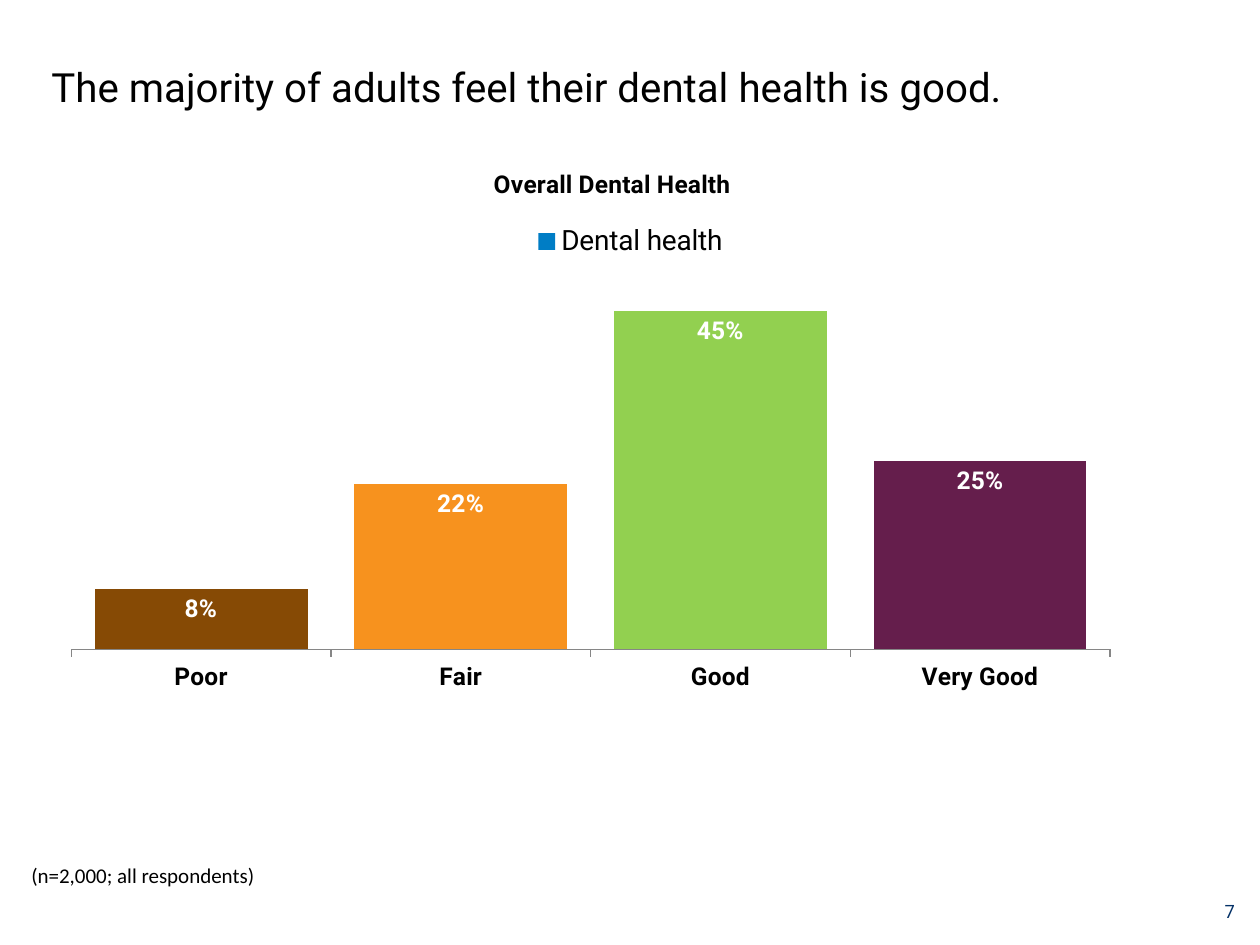
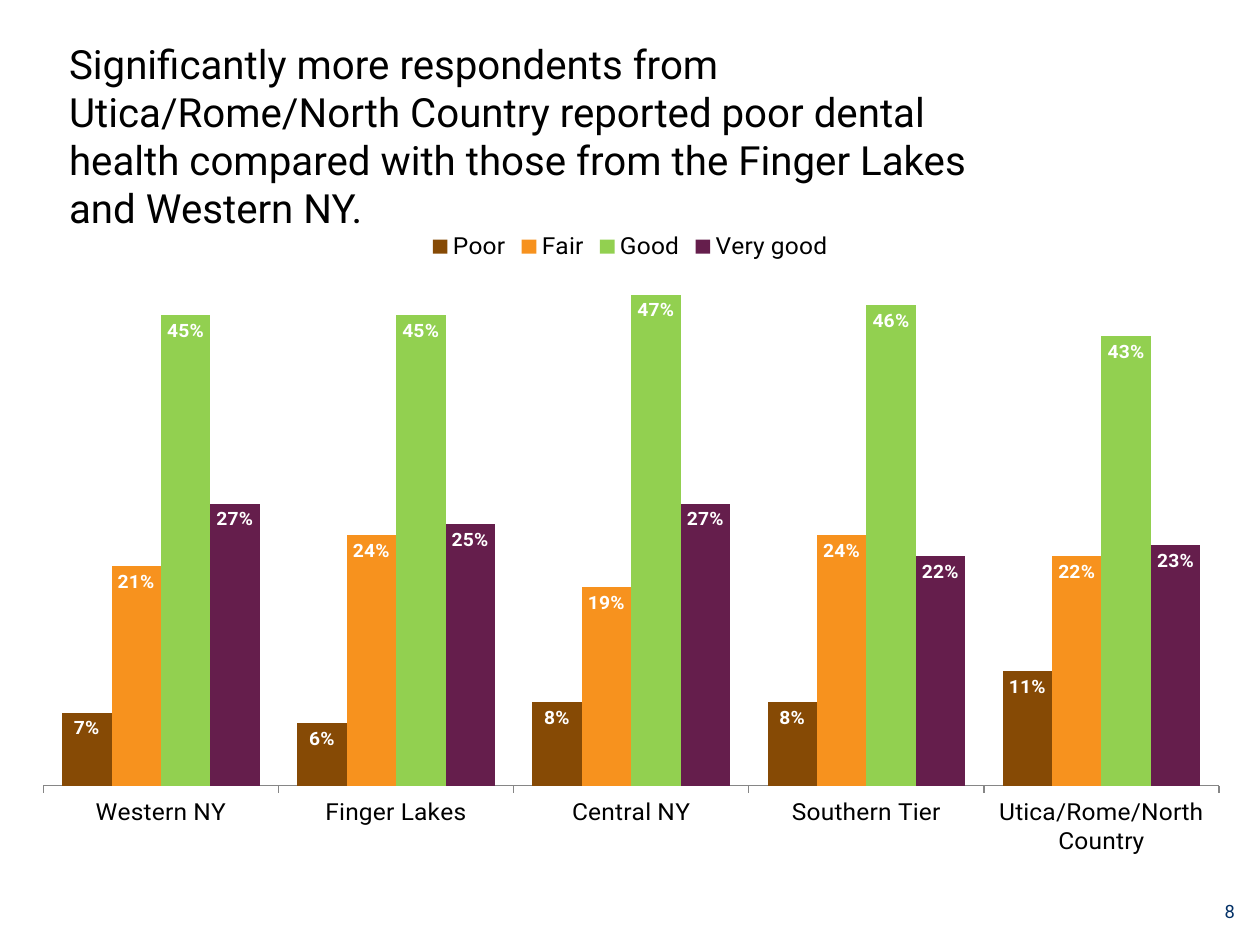
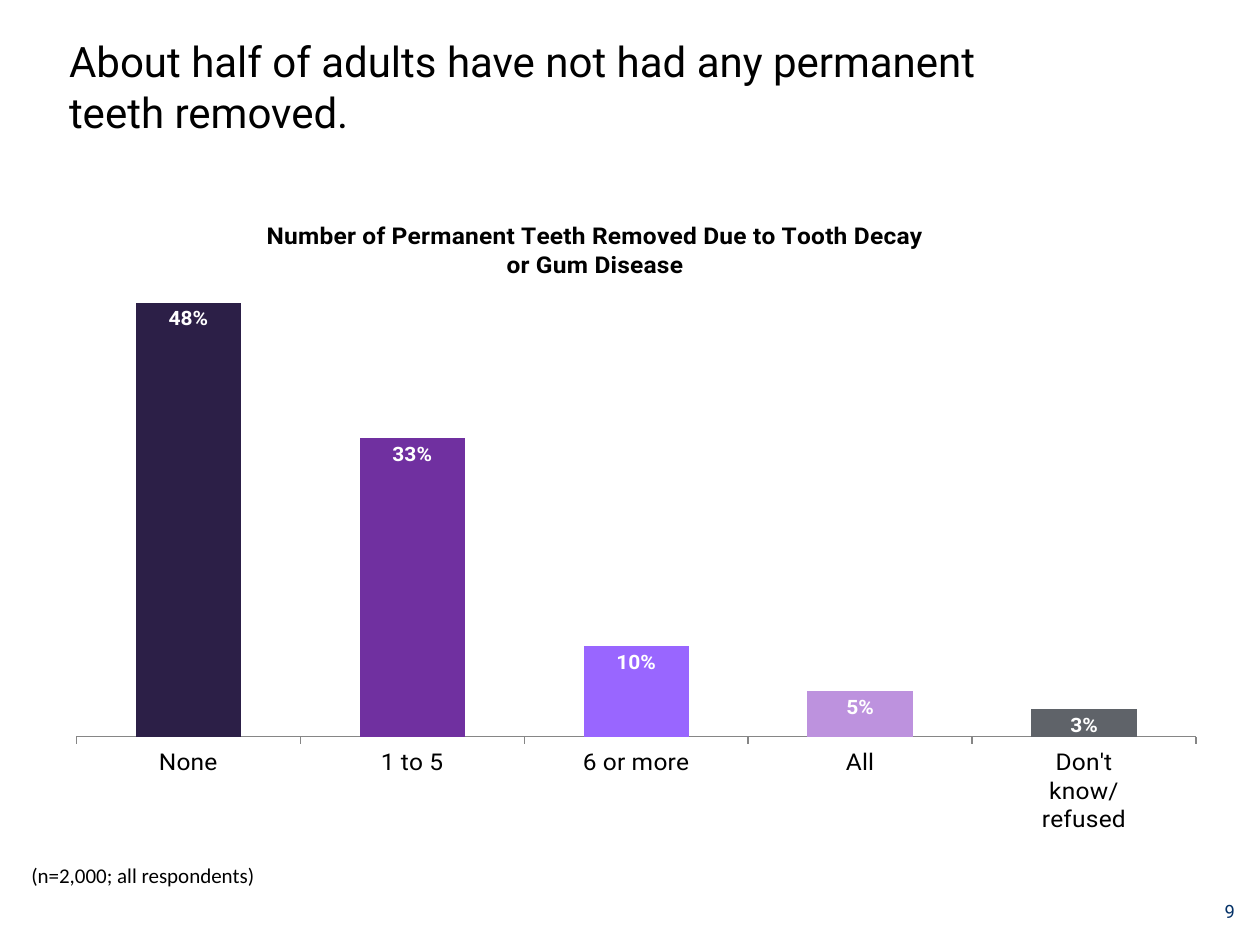
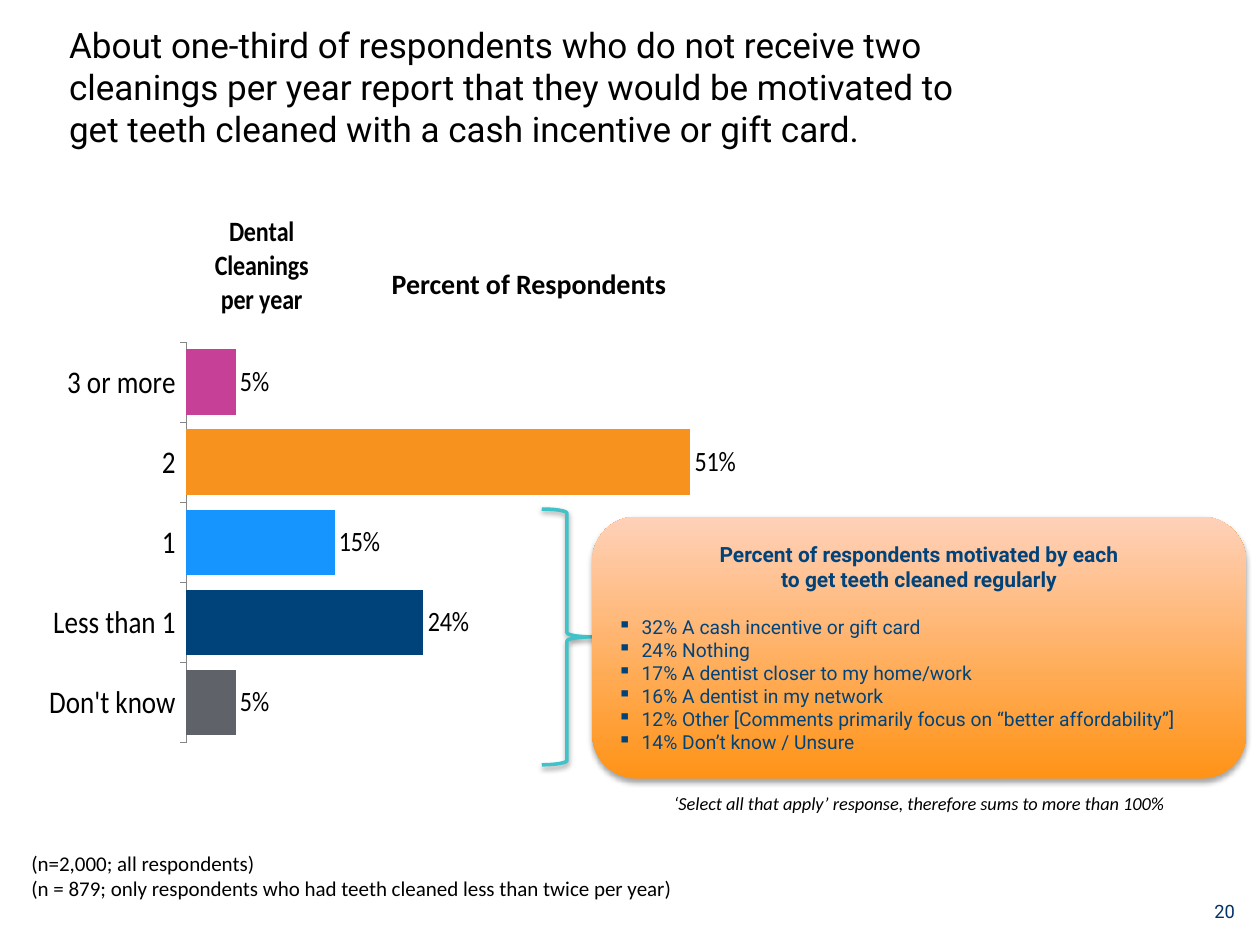
from dataclasses import dataclass

from pptx import Presentation
from pptx.chart.data import CategoryChartData
from pptx.dml.color import RGBColor
from pptx.enum.chart import XL_CHART_TYPE, XL_LABEL_POSITION, XL_LEGEND_POSITION, XL_TICK_MARK
from pptx.enum.shapes import MSO_SHAPE
from pptx.enum.text import MSO_ANCHOR, PP_ALIGN
from pptx.oxml import parse_xml
from pptx.oxml.ns import nsdecls, qn
from pptx.util import Inches, Pt

COLUMNS = XL_CHART_TYPE.COLUMN_CLUSTERED
BARS = XL_CHART_TYPE.BAR_CLUSTERED
INSIDE_END = XL_LABEL_POSITION.INSIDE_END
OUTSIDE_END = XL_LABEL_POSITION.OUTSIDE_END
LEGEND_TOP = XL_LEGEND_POSITION.TOP
TICK_OUTSIDE = XL_TICK_MARK.OUTSIDE
TICK_NONE = XL_TICK_MARK.NONE
BRACE = MSO_SHAPE.RIGHT_BRACE
CALLOUT = MSO_SHAPE.ROUNDED_RECTANGULAR_CALLOUT
TOP, MIDDLE = MSO_ANCHOR.TOP, MSO_ANCHOR.MIDDLE
LEFT, CENTER, RIGHT = PP_ALIGN.LEFT, PP_ALIGN.CENTER, PP_ALIGN.RIGHT


@dataclass(frozen=True)
class Theme:
    heading_font: str = "Roboto"
    body_font: str = "Calibri"
    black: str = "000000"
    white: str = "FFFFFF"
    axis: str = "868686"
    page_number: str = "043167"
    blue: str = "007DC5"
    navy: str = "00437B"
    teal: str = "3FC2C8"
    brown: str = "864A05"
    orange: str = "F7921E"
    green: str = "92D050"
    plum: str = "651E4C"
    gray: str = "5F6369"
    sky: str = "1795FF"
    pink: str = "C64097"
    dark_teal: str = "073F5E"
    teeth: tuple = ("2C1F47", "7030A0", "9966FF", "BD92DE", "5F6369")
    callout_bottom: str = "FF9316"
    callout_top: str = "FFD1B9"
    title_size: float = 23
    chart_title_size: float = 14
    subtitle_size: float = 16
    callout_size: float = 12
    bullet_size: float = 11
    note_size: float = 12
    small_size: float = 10.5

    @property
    def ratings(self):
        return self.brown, self.orange, self.green, self.plum


class Deck:
    def __init__(self, theme):
        self.theme = theme
        self.presentation = Presentation()
        self.presentation.slide_width = Inches(10)
        self.presentation.slide_height = Inches(7.5)
        self.slide = None

    def style(self, font, size, color, name, bold=False, italic=False):
        font.size, font.name = Pt(size), name
        font.bold, font.italic = bold, italic
        font.color.rgb = RGBColor.from_string(color)

    def text(self, box, content, size, color=None, name=None, anchor=TOP,
             align=LEFT, wrap=True, bold=False, italic=False):
        shape = self.slide.shapes.add_textbox(*map(Inches, box))
        frame = shape.text_frame
        frame.word_wrap, frame.vertical_anchor = wrap, anchor
        frame.text = content
        for paragraph in frame.paragraphs:
            paragraph.alignment = align
            for run in paragraph.runs:
                self.style(run.font, size, color or self.theme.black,
                           name or self.theme.body_font, bold, italic)

    def start_slide(self, number, title, left, width, top=0.3, size=None):
        theme = self.theme
        self.slide = self.presentation.slides.add_slide(self.presentation.slide_layouts[6])
        self.text((left, top, width, 0.77), title, size or theme.title_size,
                  name=theme.heading_font, anchor=MIDDLE)
        self.text((9.3, 7.11, 0.6, 0.24), str(number), theme.small_size,
                  theme.page_number, theme.heading_font, MIDDLE, RIGHT)

    def note(self, content, top=6.8, width=1.99, height=0.3):
        self.text((0.15, top, width, height), content, self.theme.note_size, wrap=False)

    def place(self, chart, part, index, percents):
        parent = chart.element.find(f'.//{qn(part)}')
        for layout in parent.findall(qn("c:layout")):
            parent.remove(layout)
        target = '<c:layoutTarget val="inner"/>' if len(percents) == 4 else ""
        lengths = "".join(f'<c:{name} val="{percent / 100:.4f}"/>'
                          for name, percent in zip("xywh", percents))
        parent.insert(index, parse_xml(
            f'<c:layout {nsdecls("c")}><c:manualLayout>{target}'
            f'<c:xMode val="edge"/><c:yMode val="edge"/>{lengths}'
            f'</c:manualLayout></c:layout>'))

    def chart(self, box, categories, series, colors, plot_percents, gap, maximum,
              label_size, axis_size, kind=COLUMNS, point_colors=(), font=None,
              axis_bold=False, label_color=None, label_bold=True,
              label_position=INSIDE_END, legend_size=None, legend_percents=None):
        theme = self.theme
        font = font or theme.heading_font
        data = CategoryChartData(number_format="0%")
        data.categories = categories
        for name, percents in series.items():
            data.add_series(name, [percent / 100 for percent in percents])
        chart = self.slide.shapes.add_chart(kind, *map(Inches, box), data).chart
        self.style(chart.font, axis_size, theme.black, theme.body_font)
        chart.element.find(qn("c:txPr")).addprevious(parse_xml(
            f'<c:spPr {nsdecls("c", "a")}><a:noFill/><a:ln><a:noFill/></a:ln></c:spPr>'))
        chart.has_title = False
        self.place(chart, "c:plotArea", 0, plot_percents)

        plot = chart.plots[0]
        plot.vary_by_categories, plot.gap_width, plot.overlap = False, gap, 0
        for bars, color in zip(plot.series, colors):
            bars.invert_if_negative = False
            for target, fill_color in [(bars, color)] + [
                    (bars.points[index], value) for index, value in enumerate(point_colors)]:
                target.format.fill.solid()
                target.format.fill.fore_color.rgb = RGBColor.from_string(fill_color)
            labels = bars.data_labels
            self.style(labels.font, label_size, label_color or theme.white, font, label_bold)
            labels.number_format, labels.number_format_is_linked = "0%", False
            labels.position, labels.show_value = label_position, True

        values = chart.value_axis
        values.visible = values.has_major_gridlines = False
        values.minimum_scale, values.maximum_scale = 0, maximum
        axis = chart.category_axis
        axis.major_tick_mark, axis.minor_tick_mark = TICK_OUTSIDE, TICK_NONE
        axis.format.line.color.rgb = RGBColor.from_string(theme.axis)
        self.style(axis.tick_labels.font, axis_size, theme.black, font, axis_bold)
        chart.has_legend = legend_size is not None
        if chart.has_legend:
            chart.legend.position, chart.legend.include_in_layout = LEGEND_TOP, False
            self.style(chart.legend.font, legend_size, theme.black, font)
        if legend_percents:
            self.place(chart, "c:legend", 1, legend_percents)
        return chart

    def chart_title(self, chart, content, percents, size=None, name=None):
        frame = chart.chart_title.text_frame
        frame.text = content
        for paragraph in frame.paragraphs:
            for run in paragraph.runs:
                self.style(run.font, size or self.theme.chart_title_size, self.theme.black,
                           name or self.theme.heading_font, bold=True)
        self.place(chart, "c:title", 1, percents)

    def shape(self, kind, box, shadow_distance, shadow_alpha):
        shape = self.slide.shapes.add_shape(kind, *map(Inches, box))
        shape.shadow.inherit = False
        shape.element.spPr.find(qn("a:effectLst")).append(parse_xml(
            f'<a:outerShdw {nsdecls("a")} blurRad="{Pt(3.1)}" dist="{Pt(shadow_distance)}" '
            f'dir="5400000" rotWithShape="0"><a:srgbClr val="{self.theme.black}">'
            f'<a:alpha val="{shadow_alpha * 1000}"/></a:srgbClr></a:outerShdw>'))
        return shape

    def brace(self, box):
        shape = self.shape(BRACE, box, 1.6, 38)
        shape.fill.background()
        shape.line.color.rgb = RGBColor.from_string(self.theme.teal)
        shape.line.width = Pt(2)

    def callout(self, box, headings, bullets):
        theme = self.theme
        shape = self.shape(CALLOUT, box, 1.8, 35)
        for index, value in enumerate((-0.5, -0.25, 0.17)):
            shape.adjustments[index] = value
        shape.line.fill.background()
        shape.fill.gradient()
        shape.fill.gradient_angle = 90
        for stop, color in zip(shape.fill.gradient_stops,
                               (theme.callout_bottom, theme.callout_top)):
            stop.color.rgb = RGBColor.from_string(color)
        frame = shape.text_frame
        frame.word_wrap, frame.vertical_anchor = True, MIDDLE
        frame.text = "\n".join(headings + bullets)
        for index, paragraph in enumerate(frame.paragraphs):
            is_heading = index < len(headings)
            paragraph.alignment = CENTER if is_heading else LEFT
            if index == len(headings):
                paragraph.space_before = Pt(13)
            if not is_heading:
                properties = paragraph._p.get_or_add_pPr()
                properties.set("marL", str(Inches(0.19)))
                properties.set("indent", str(-Inches(0.19)))
                properties.append(parse_xml(f'<a:buChar {nsdecls("a")} char="▪"/>'))
            for run in paragraph.runs:
                self.style(run.font, theme.callout_size if is_heading else theme.bullet_size,
                           theme.navy, theme.heading_font, is_heading)


def main():
    theme = Theme()
    deck = Deck(theme)
    all_respondents = "(n=2,000; all respondents)"

    deck.start_slide(7, "The majority of adults feel their dental health is good.", 0.31, 9.38)
    chart = deck.chart(
        (0.41, 1.16, 9.19, 5.22), ["Poor", "Fair", "Good", "Very Good"],
        {"Dental health": (8, 22, 45, 25)}, [theme.blue], (1.7, 19.4, 89.7, 57.1),
        gap=22, maximum=0.5, label_size=14, axis_size=14, axis_bold=True,
        point_colors=theme.ratings, legend_size=16)
    deck.chart_title(chart, "Overall Dental Health", (37.8, 2.5))
    deck.note(all_respondents)

    deck.start_slide(
        8, "Significantly more respondents from Utica/Rome/North Country reported poor dental "
        "health compared with those from the Finger Lakes and Western NY.", 0.45, 7.63, top=0.69)
    deck.chart(
        (0.19, 1.57, 9.64, 5.22),
        ["Western NY", "Finger Lakes", "Central NY", "Southern Tier", "Utica/Rome/North Country"],
        {"Poor": (7, 6, 8, 8, 11), "Fair": (21, 24, 19, 24, 22),
         "Good": (45, 45, 47, 46, 43), "Very good": (27, 25, 27, 22, 23)},
        theme.ratings, (1.6, 10.4, 96.8, 83),
        gap=76, maximum=0.5, label_size=11, axis_size=14, legend_size=14,
        legend_percents=(33, 4.7))

    deck.start_slide(9, "About half of adults have not had any permanent teeth removed.",
                     0.45, 7.54, size=24)
    chart = deck.chart(
        (0.45, 1.35, 9.19, 5.22), ["None", "1 to 5", "6 or more", "All", "Don't know/refused"],
        {"Series 1": (48, 33, 10, 5, 3)}, [theme.dark_teal], (1.7, 3.9, 96.7, 87.4),
        gap=113, maximum=0.6, label_size=12, axis_size=14, point_colors=theme.teeth)
    deck.chart_title(
        chart, "Number of Permanent Teeth Removed Due to Tooth Decay\nor Gum Disease",
        (17.8, 7.5))
    deck.note(all_respondents)

    deck.start_slide(
        20, "About one-third of respondents who do not receive two cleanings per year report "
        "that they would be motivated to get teeth cleaned with a cash incentive or gift card.",
        0.45, 7.66, size=20)
    deck.text((3.01, 2.07, 2.58, 0.37), "Percent of Respondents", theme.subtitle_size, bold=True)
    deck.brace((4.3, 4.04, 0.4, 2.03))
    chart = deck.chart(
        (0.39, 1.48, 7.02, 4.42), ["Don't know", "Less than 1", "1", "2", "3 or more"],
        {"Series 1": (5, 24, 15, 51, 5)}, [theme.teal], (1.7, 28, 78, 72),
        gap=22, maximum=0.6, label_size=16, axis_size=18, kind=BARS,
        point_colors=(theme.gray, theme.navy, theme.sky, theme.orange, theme.pink),
        font=theme.body_font, label_color=theme.black, label_bold=False,
        label_position=OUTSIDE_END)
    deck.chart_title(chart, "Dental\nCleanings\nper year", (5, 4),
                     theme.subtitle_size, theme.body_font)
    deck.callout(
        (4.7, 4.1, 5.19, 2.08),
        ["Percent of respondents motivated by each", "to get teeth cleaned regularly"],
        ["32% A cash incentive or gift card", "24% Nothing",
         "17% A dentist closer to my home/work", "16% A dentist in my network",
         "12% Other [Comments primarily focus on “better affordability”]",
         "14% Don’t know / Unsure"])
    deck.text((5.25, 6.24, 4.75, 0.29),
              "‘Select all that apply’ response, therefore sums to more than 100%",
              theme.small_size, italic=True)
    deck.note(all_respondents + "\n(n = 879; only respondents who had teeth cleaned "
              "less than twice per year)", 6.7, 5.29, 0.5)

    deck.presentation.save("out.pptx")


if __name__ == "__main__":
    main()
